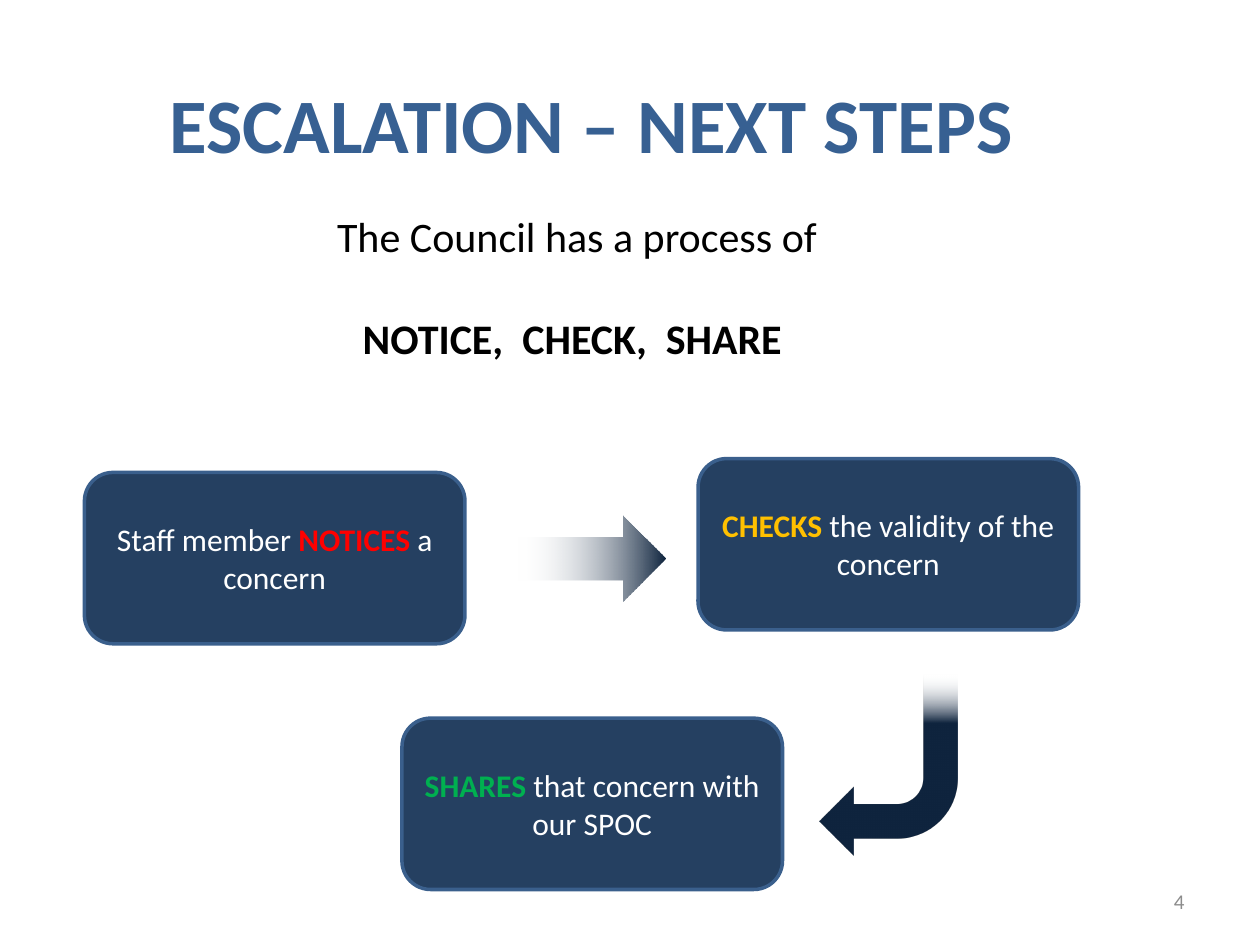
from lxml import etree
from pptx import Presentation
from pptx.dml.color import RGBColor
from pptx.enum.shapes import MSO_SHAPE
from pptx.enum.text import MSO_ANCHOR, PP_ALIGN
from pptx.oxml.ns import qn
from pptx.util import Inches, Pt

CENTER, RIGHT = PP_ALIGN.CENTER, PP_ALIGN.RIGHT
TOP, MIDDLE = MSO_ANCHOR.TOP, MSO_ANCHOR.MIDDLE
ROUNDED = MSO_SHAPE.ROUNDED_RECTANGLE
STRAIGHT, BENT = MSO_SHAPE.RIGHT_ARROW, MSO_SHAPE.BENT_ARROW

FONT = "Calibri"
NAVY, EDGE, ARROW = "254061", "3A5F8C", "0F243E"
WHITE, BLACK = "FFFFFF", "000000"
STEP_WIDTH, STEP_HEIGHT = 3.02, 1.36

TITLE = [[("ESCALATION – NEXT STEPS", "376092", True)]]
PROCESS = [
    [("The Council has a process of", BLACK, False)],
    [("NOTICE,  CHECK,  SHARE ", BLACK, True)],
]
NUMBER = [[("4", "8C8C8C", False)]]
TEXTS = [
    ((0, 0.56, 9.39, 0.94), TITLE, 44, CENTER, TOP, 0),
    ((0, 1.62, 9.16, 1.32), PROCESS, 24, CENTER, TOP, 29.3),
    ((7.17, 6.95, 2.33, 0.4), NUMBER, 12, RIGHT, MIDDLE, 0),
]
STEPS = [
    (0.67, 3.75, [("Staff member ", WHITE, False), ("NOTICES ", "FF0000", True),
                  ("a concern", WHITE, False)]),
    (5.54, 3.64, [("CHECKS", "FFC000", True),
                  (" the validity of the concern", WHITE, False)]),
    (3.19, 5.7, [("SHARES", "00B050", True),
                 (" that concern with our SPOC", WHITE, False)]),
]
ARROWS = [
    (STRAIGHT, (4.11, 4.09, 1.17, 0.68), 0, 0, 1),
    (BENT, (6.5, 5.35, 1.1, 1.44), 180, 90, 0.27),
]


def color(value):
    """Turn a hex string into a colour."""
    return RGBColor.from_string(value)


def write(shape, paragraphs, size, align, anchor, gap=0):
    """Fill a shape with paragraphs of (text, colour, bold) spans."""
    frame = shape.text_frame
    frame.word_wrap = True
    frame.vertical_anchor = anchor
    for index, spans in enumerate(paragraphs):
        para = frame.add_paragraph() if index else frame.paragraphs[0]
        para.alignment = align
        para.font.name, para.font.size = FONT, Pt(size)
        para.space_before = Pt(gap if index else 0)
        for text, hue, bold in spans:
            span = para.add_run()
            span.text = text
            span.font.bold = bold
            span.font.color.rgb = color(hue)


def add_step(page, left, top, spans):
    """Add one rounded process box."""
    box = page.shapes.add_shape(
        ROUNDED, *map(Inches, (left, top, STEP_WIDTH, STEP_HEIGHT)))
    box.shadow.inherit = False
    box.fill.solid()
    box.fill.fore_color.rgb = color(NAVY)
    box.line.color.rgb = color(EDGE)
    box.line.width = Pt(2)
    write(box, [spans], 18, CENTER, MIDDLE)


def add_arrow(page, kind, place, rotation, angle, solid_from):
    """Add an arrow that fades in from transparent white."""
    arrow = page.shapes.add_shape(kind, *map(Inches, place))
    arrow.rotation = rotation
    arrow.shadow.inherit = False
    arrow.line.fill.background()
    arrow.fill.gradient()
    arrow.fill.gradient_angle = angle
    start, end = arrow.fill.gradient_stops
    start.position, end.position = 0, solid_from
    start.color.rgb, end.color.rgb = color(WHITE), color(ARROW)
    fade = next(arrow.element.iter(qn("a:gs"))).find(qn("a:srgbClr"))
    etree.SubElement(fade, qn("a:alpha"), val="0")


def main():
    """Build the slide and save it."""
    deck = Presentation()
    deck.slide_width, deck.slide_height = Inches(10), Inches(7.5)
    page = deck.slides.add_slide(deck.slide_layouts[6])
    for place, *content in TEXTS:
        write(page.shapes.add_textbox(*map(Inches, place)), *content)
    for step in STEPS:
        add_step(page, *step)
    for arrow in ARROWS:
        add_arrow(page, *arrow)
    deck.save("out.pptx")


if __name__ == "__main__":
    main()
